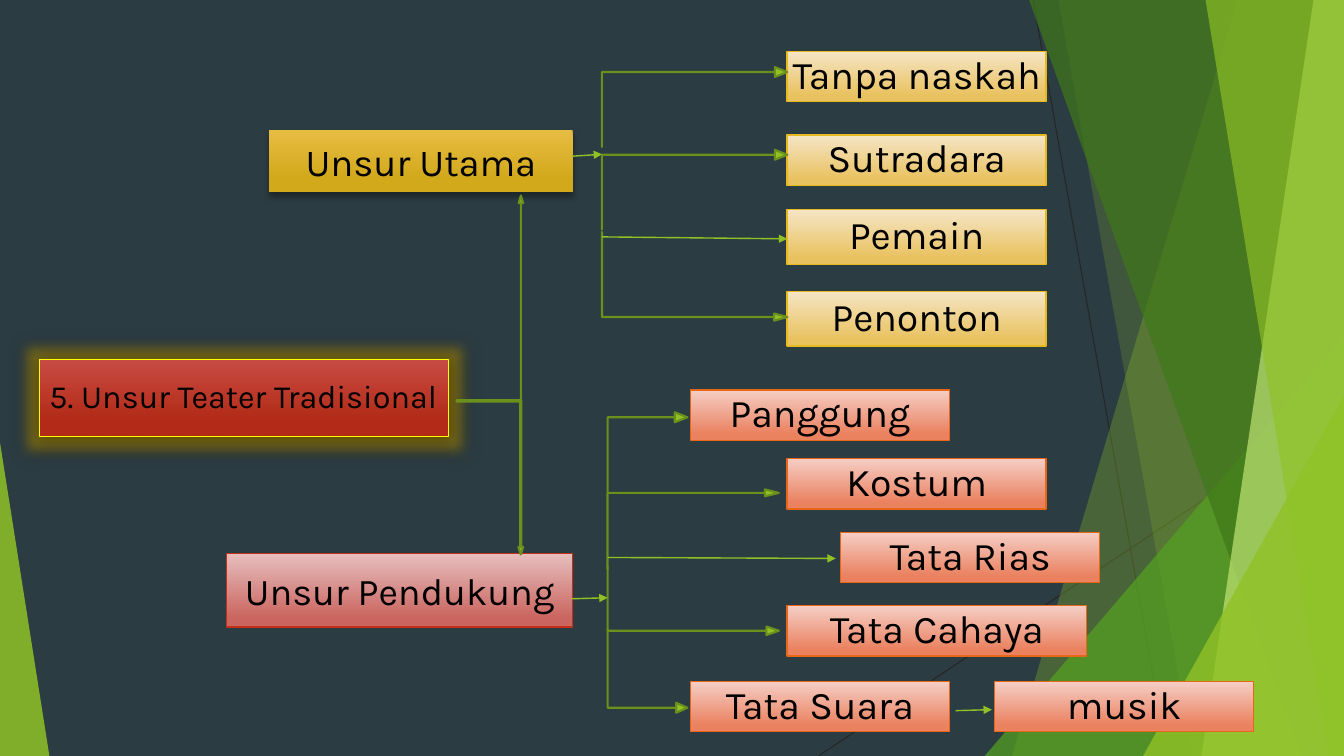
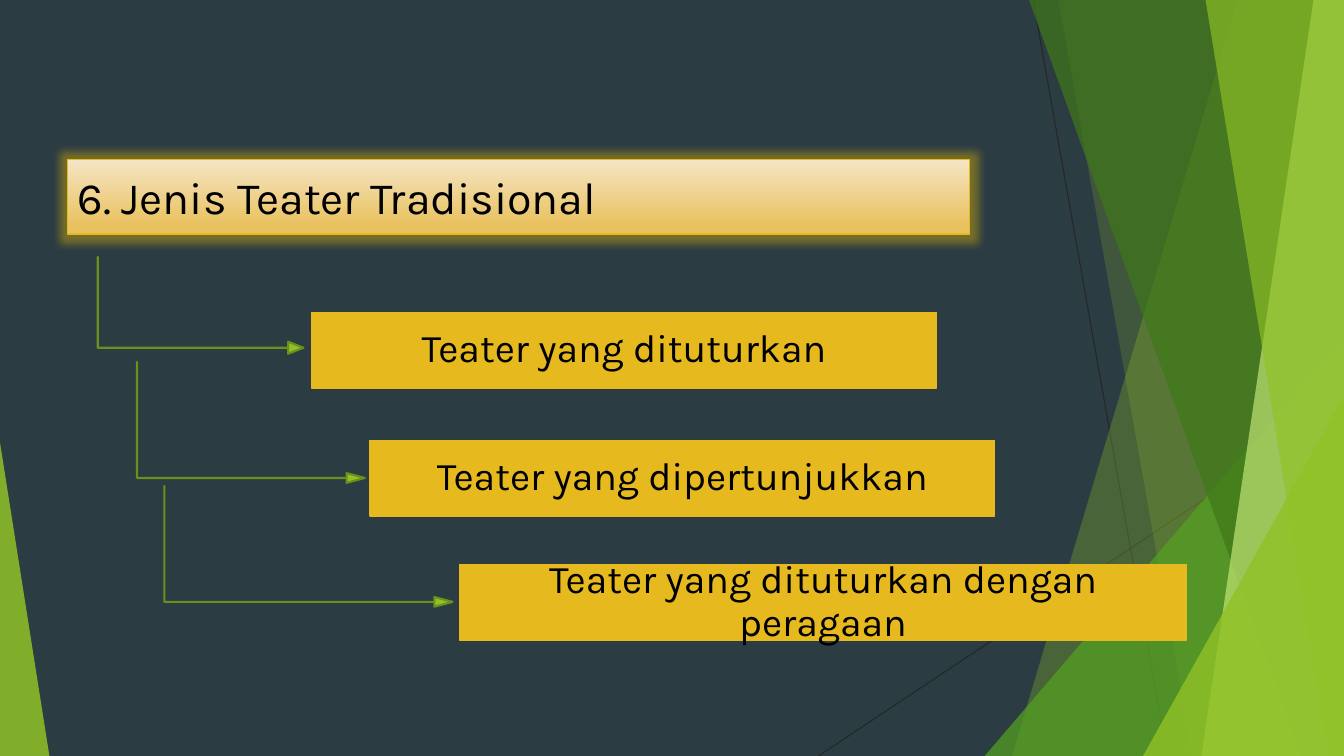
from collections import namedtuple

from lxml import etree
from pptx import Presentation
from pptx.dml.color import RGBColor
from pptx.enum.shapes import MSO_CONNECTOR, MSO_SHAPE
from pptx.enum.text import MSO_ANCHOR, MSO_AUTO_SIZE, PP_ALIGN
from pptx.oxml.ns import qn
from pptx.util import Pt

RECTANGLE = MSO_SHAPE.RECTANGLE
TRIANGLE = MSO_SHAPE.ISOSCELES_TRIANGLE
BENT_ARROW = MSO_SHAPE.BENT_UP_ARROW
STRAIGHT = MSO_CONNECTOR.STRAIGHT
MIDDLE = MSO_ANCHOR.MIDDLE
FIXED = MSO_AUTO_SIZE.NONE
LEFT, CENTER = PP_ALIGN.LEFT, PP_ALIGN.CENTER

WIDTH, HEIGHT = 960, 540
FONT = "Karla"
NIGHT, INK, BLACK = "2C3C43", "262626", "000000"
GREEN, LEAF, FOREST, LIME = "90C226", "54A021", "3F7819", "C0E474"
MOSS, GOLD, YELLOW, ORANGE, RED = "6B901C", "E6B91E", "FFFF00", "E76618", "C42F1A"

Box = namedtuple("Box", "left top width height")
Look = namedtuple("Look", "stops line line_width", defaults=(None, 1))

SOLID_GOLD = Look(((0, GOLD),), GOLD)
PALE_GOLD = Look(((0, "F5E5C5"), (0.88, "E9C260")), GOLD)
DEEP_GOLD = Look(((0, "E7BC43"), (0.78, "D2A91B")))
PALE_ORANGE = Look(((0, "F5CEC5"), (0.88, "EA815F")), ORANGE)
PALE_RED = Look(((0, "E6BFBE"), (0.88, "CB6560")), RED)
DEEP_RED = Look(((0, "C74B42"), (0.78, "B32B18")), YELLOW, 0.75)


def color(value):
    return RGBColor.from_string(value)


def set_format(target, **values):
    for name, value in values.items():
        setattr(target, name, value)


def within(region, left, top, width, height):
    """Turn a box given relative to a region into a slide box."""
    return Box(region.left + left, region.top + top, width, height)


def paint(shape, look):
    fill = shape.fill
    if len(look.stops) == 1:
        fill.solid()
        fill.fore_color.rgb = color(look.stops[0][1])
    else:
        fill.gradient()
        fill.gradient_angle = 270
        for stop, (position, value) in zip(fill.gradient_stops, look.stops):
            stop.position = position
            stop.color.rgb = color(value)
    if look.line:
        shape.line.color.rgb = color(look.line)
        shape.line.width = Pt(look.line_width)
    else:
        shape.line.fill.background()
    shape.shadow.inherit = False


def add_opacity(parent, percent):
    etree.SubElement(parent, qn("a:alpha"), val=str(percent * 1000))


def add_effect(shape, kind, value, opacity, **lengths):
    effects = shape.element.spPr.find(qn("a:effectLst"))
    effect = etree.SubElement(effects, qn(f"a:{kind}"))
    for name, points in lengths.items():
        effect.set(name, str(int(Pt(points))))
    if kind == "outerShdw":
        effect.set("dir", "5400000")
        effect.set("rotWithShape", "0")
    add_opacity(etree.SubElement(effect, qn("a:srgbClr"), val=value), opacity)


def write(shape, text, size, align=CENTER, spacing=1, margin=None):
    frame = shape.text_frame
    set_format(frame, word_wrap=True, auto_size=FIXED, vertical_anchor=MIDDLE)
    if margin is not None:
        sides = ("left", "right", "top", "bottom")
        set_format(frame, **{f"margin_{side}": Pt(margin) for side in sides})
    para = frame.paragraphs[0]
    set_format(para, alignment=align, line_spacing=spacing)
    span = para.add_run()
    span.text = text
    set_format(span.font, name=FONT, size=Pt(size))
    span.font.color.rgb = color(BLACK)


def add_preset(page, kind, box, look):
    shape = page.shapes.add_shape(kind, *map(Pt, box))
    paint(shape, look)
    return shape


def add_label(page, box, text, look, size=28, **layout):
    shape = add_preset(page, RECTANGLE, box, look)
    write(shape, text, size, **layout)
    return shape


def add_leaf(page, box, text, look):
    add_label(page, box, text, look, spacing=0.9, margin=2.16)


def add_title(page, box, text, look, size, glow, spacing=1):
    title = page.shapes.title
    set_format(title, **{name: Pt(value) for name, value in box._asdict().items()})
    paint(title, look)
    add_effect(title, "glow", "E6B800", 40, rad=glow)
    write(title, text, size, LEFT, spacing)
    return title


def add_line(page, start, end, value, width, arrow=False):
    line = page.shapes.add_connector(STRAIGHT, *map(Pt, (*start, *end)))
    line.line.color.rgb = color(value)
    line.line.width = Pt(width)
    properties = line.element.spPr
    if arrow:
        etree.SubElement(properties.find(qn("a:ln")), qn("a:tailEnd"), type="triangle")
    etree.SubElement(properties, qn("a:effectLst"))


def add_bent_arrow(page, box, adjust, flip=None, turned=False):
    """Fill the visible box; a turned arrow points right instead of up."""
    if turned:
        shift = (box.width - box.height) / 2
        box = Box(box.left + shift, box.top - shift, box.height, box.width)
    arrow = add_preset(page, BENT_ARROW, box, Look(((0, GREEN),), MOSS, 1.5))
    for index, value in enumerate(adjust):
        arrow.adjustments[index] = value
    if turned:
        arrow.rotation = 90
    if flip:
        arrow.element.spPr.find(qn("a:xfrm")).set(flip, "1")


def finish_facet(shape, value, opacity):
    paint(shape, Look(((0, value),)))
    add_opacity(shape.element.spPr.find(qn("a:solidFill"))[0], opacity)


def add_pane(page, top_x, bottom_x, value, opacity):
    """Add a pane from a slanted left edge to the right edge of the slide."""
    builder = page.shapes.build_freeform(Pt(top_x), Pt(0))
    corners = ((WIDTH, 0), (WIDTH, HEIGHT), (bottom_x, HEIGHT))
    builder.add_line_segments([(Pt(x), Pt(y)) for x, y in corners])
    finish_facet(builder.convert_to_shape(), value, opacity)


def add_wedge(page, left, top, width, apex, value, opacity):
    """Add a right triangle standing on the bottom edge of the slide."""
    box = Box(left, top, width, HEIGHT - top)
    shape = add_preset(page, TRIANGLE, box, Look(((0, value),)))
    shape.adjustments[0] = apex
    finish_facet(shape, value, opacity)


def decorate_layout(layout, page):
    """Draw the shared facets on a page and move them into its layout."""
    layout.background.fill.solid()
    layout.background.fill.fore_color.rgb = color(NIGHT)
    add_line(page, (738, 0), (833.8, HEIGHT), INK, 0.75)
    add_line(page, (WIDTH, 290.2), (584.6, HEIGHT), INK, 0.75)
    add_pane(page, 884.2, 722.9, GREEN, 30)
    add_pane(page, 756, 851.8, GREEN, 20)
    add_wedge(page, 703.4, 239.8, 256.6, 1, LEAF, 72)
    add_pane(page, 735.1, 929.5, FOREST, 70)
    add_pane(page, 938.2, 858.2, LIME, 70)
    add_pane(page, 861.1, 949, GREEN, 65)
    add_wedge(page, 816.5, 283, 143.5, 1, GREEN, 80)
    add_wedge(page, 0, 316.1, 35.3, 0, GREEN, 85)
    facets = [shape for shape in page.shapes if not shape.is_placeholder]
    for number, facet in enumerate(facets, 100):
        facet.element[0][0].set("id", str(number))
        layout.shapes.element.append(facet.element)


def add_branch(page, region, look, leaves, arrows, links):
    """Add leaves, bent arrows and straight links relative to a region."""
    for text, *place in leaves:
        add_leaf(page, within(region, *place), text, look)
    for top, width, height, flip, *adjust in arrows:
        add_bent_arrow(page, within(region, 0, top, width, height), (0, *adjust), flip, True)
    for start_x, start_y, end_x, end_y in links:
        add_line(page, (region.left + start_x, region.top + start_y),
                 (region.left + end_x, region.top + end_y), GREEN, 1, True)


def add_root(page, region):
    """Add the title and the two headings it forks into."""
    title_box = within(region, 0, 164.2, 292.3, 54.7)
    title = add_title(page, title_box, "5. Unsur Teater Tradisional", DEEP_RED, 23.1, 18, 0.9)
    add_effect(title, "outerShdw", BLACK, 100, blurRad=8.5, dist=1)
    main = add_label(page, within(region, 164.2, 0, 216.7, 44.6), "Unsur Utama", DEEP_GOLD, 27.3)
    add_effect(main, "outerShdw", BLACK, 35, blurRad=4, dist=3)
    add_label(page, within(region, 133.9, 302.4, 247, 52.6), "Unsur Pendukung", PALE_RED, 27)
    add_bent_arrow(page, within(region, 298.1, 46.8, 47.5, 146.2), (0, 0.034, 0.113))
    add_bent_arrow(page, within(region, 298.1, 193, 47.5, 110.2), (0.02, 0.036, 0.113), "flipV")


def build_elements(page):
    add_root(page, Box(28.1, 92.9, 380.9, 355))
    add_branch(
        page, Box(430, 36, 317, 212), PALE_GOLD,
        leaves=[
            ("Tanpa naskah", 132.3, 0.7, 185, 36),
            ("Sutradara", 132.3, 60.5, 185, 36),
            ("Pemain", 132.3, 113.8, 185, 39),
            ("Penonton", 132.3, 172.1, 185, 39),
        ],
        arrows=[
            (11.9, 132.5, 57, "flipH", 0.062, 0.158),
            (71, 132.5, 57, "flipH", 0.062, 0.158),
            (129.6, 132.5, 63.4, None, 0.04, 0.151),
        ],
        links=[(0, 133.2, 132.3, 134.6), (-21.8, 75.6, 0, 74.2)])
    add_branch(
        page, Box(434, 278.6, 462, 245), PALE_ORANGE,
        leaves=[
            ("Panggung", 59.2, 0, 185, 36),
            ("Kostum", 128.3, 49, 185, 36),
            ("Tata Rias", 166.5, 101.6, 185, 36),
            ("Tata Cahaya", 128.3, 154.1, 213.8, 36),
            ("Tata Suara", 59.2, 208.1, 185, 36),
            ("musik", 276.6, 208.1, 185, 36),
        ],
        arrows=[
            (15.9, 57, 57, "flipH", 0.062, 0.158),
            (71, 122.4, 57, "flipH", 0.043, 0.176),
            (126, 122.4, 49, None, 0.062, 0.183),
            (170.7, 57, 59.8, None, 0.062, 0.14),
        ],
        links=[(0, 119.6, 163, 120.3), (-25.8, 149.1, 0, 148.4),
               (248.6, 229, 274.5, 228.3)])


def add_steps(page, region):
    """Add a staircase of boxes, each led to by a bent arrow."""
    steps = [
        ("Teater yang dituturkan", (152.7, 39.6, 446.4, 54),
         (0, 0, 146.9, 69.1), (0, 0.062, 0.158)),
        ("Teater yang dipertunjukkan", (194.4, 131, 446.4, 54),
         (28.1, 74.9, 162.7, 86.4), (0, 0.04, 0.151)),
        ("Teater yang dituturkan dengan peragaan", (258.5, 219.6, 519.1, 54),
         (47.6, 163.4, 205.9, 86.4), (0, 0.04, 0.151)),
    ]
    for text, place, arrow_place, adjust in steps:
        add_leaf(page, within(region, *place), text, SOLID_GOLD)
        add_bent_arrow(page, within(region, *arrow_place), adjust, turned=True)


def build_kinds(page):
    add_title(page, Box(48.2, 113.8, 644.4, 53.3), "6. Jenis Teater Tradisional", PALE_GOLD, 32, 11)
    add_steps(page, Box(69.8, 183.6, 778, 274))


def main():
    deck = Presentation()
    deck.slide_width, deck.slide_height = Pt(WIDTH), Pt(HEIGHT)
    layout = deck.slide_layouts.get_by_name("Title Only")
    pages = [deck.slides.add_slide(layout) for _ in range(2)]
    decorate_layout(layout, pages[0])
    for build, page in zip((build_elements, build_kinds), pages):
        build(page)
    deck.save("out.pptx")


if __name__ == "__main__":
    main()
